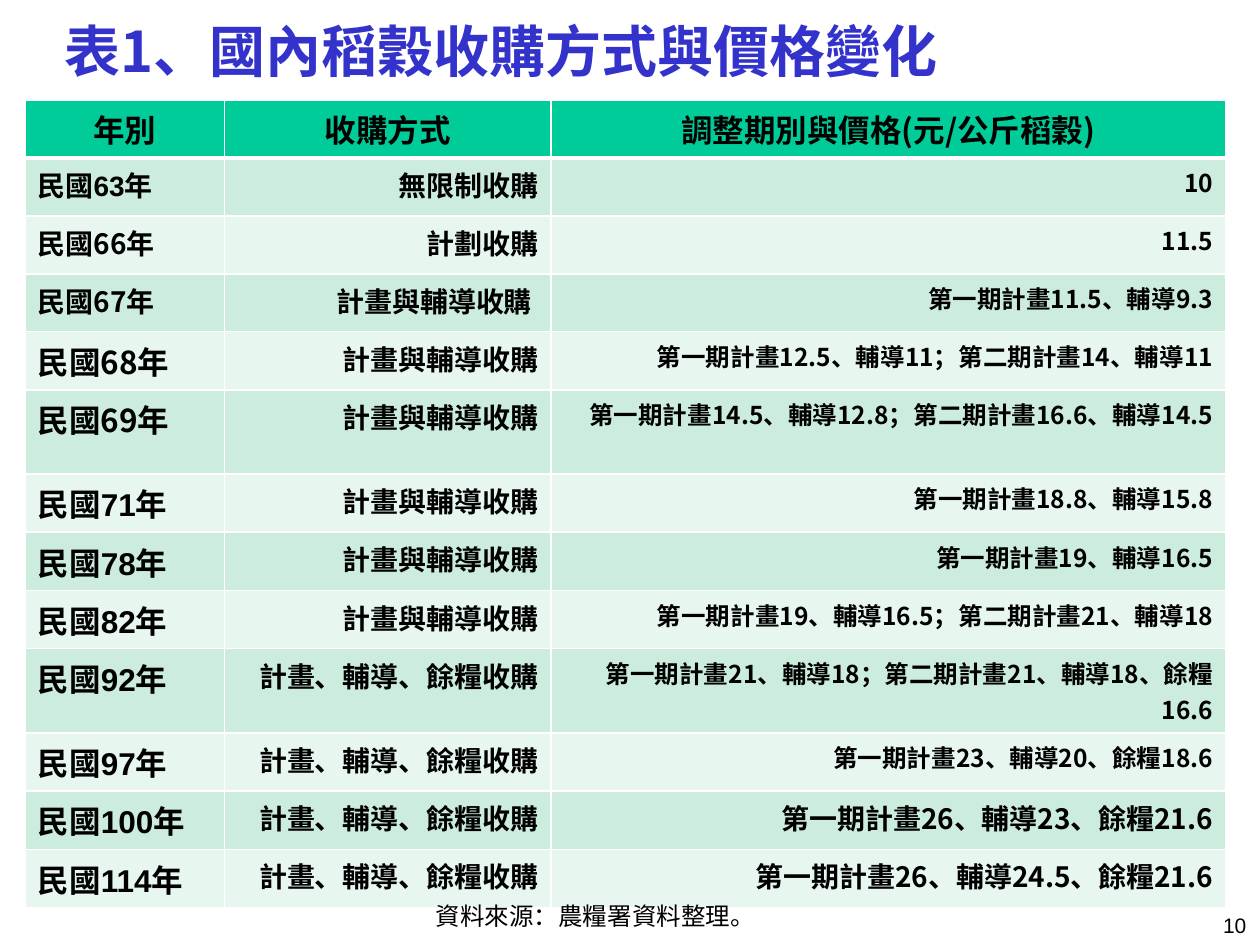
from pptx import Presentation
from pptx.dml.color import RGBColor as Rgb
from pptx.enum.text import MSO_ANCHOR as Anchor, PP_ALIGN as Align
from pptx.oxml.ns import qn
from pptx.util import Pt
from lxml.etree import SubElement as Sub

SANS, ARIAL, TIMES = "Noto Sans CJK SC", "Arial", "Times New Roman"
BLACK, WHITE, BLUE = "000000", "FFFFFF", "3333CC"
HEAD, BANDS = "00CC99", ("CCECDE", "E7F6EF")
LEFT, MID, RIGHT = Align.LEFT, Align.CENTER, Align.RIGHT


def tint(code):
    return Rgb.from_string(code)


class Page:
    def __init__(self, deck):
        self.slide = deck.slides.add_slide(deck.slide_layouts[5])

    def text(self, frame, runs, align, color=BLACK, bold=False):
        """Fill a frame with runs of (text, size, font)."""
        para = frame.paragraphs[0]
        para.alignment = align
        for words, size, face in runs:
            run = para.add_run()
            run.text = words
            font = run.font
            font.size, font.bold, font.name = Pt(size), bold, face
            font.color.rgb = tint(color)
            Sub(run._r.get_or_add_rPr(), qn("a:ea"), typeface=SANS)

    def title(self, box, runs):
        shape = self.slide.shapes.title
        shape.left, shape.top, shape.width, shape.height = map(Pt, box)
        frame = shape.text_frame
        frame.word_wrap = True
        frame.vertical_anchor = Anchor.MIDDLE
        self.text(frame, runs, MID, BLUE, True)

    def label(self, box, runs, align):
        frame = self.slide.shapes.add_textbox(*map(Pt, box)).text_frame
        frame.word_wrap = True
        self.text(frame, runs, align)

    def edges(self, cell, top, bottom):
        props = cell._tc.get_or_add_tcPr()
        for side, width in (("L", 1), ("R", 1), ("T", top), ("B", bottom)):
            line = Sub(props, qn("a:ln" + side), w=str(Pt(width)))
            fill = Sub(line, qn("a:solidFill"))
            Sub(fill, qn("a:srgbClr"), val=WHITE)

    def table(self, left, top, widths, height, rows):
        """Each row holds three (text, size, font) runs; the first is the header."""
        grid = self.slide.shapes.add_table(
            len(rows), len(widths), Pt(left), Pt(top),
            Pt(sum(widths)), Pt(height * len(rows))).table
        for col, width in zip(grid.columns, widths):
            col.width = Pt(width)
        for i, row in enumerate(rows):
            grid.rows[i].height = Pt(height)
            for j, run in enumerate(row):
                cell = grid.cell(i, j)
                self.edges(cell, 3 if i == 1 else 1, 3 if i == 0 else 1)
                cell.fill.solid()
                cell.fill.fore_color.rgb = tint(BANDS[(i - 1) % 2] if i else HEAD)
                align = (LEFT if j == 0 else RIGHT) if i else MID
                self.text(cell.text_frame, [run], align, bold=True)


PLAN, REST = "計畫與輔導收購", "計畫、輔導、餘糧收購"
# Year, year size, year font, method, price, price size
DATA = [
    ("63", 16, ARIAL, "無限制收購", "10", 14),
    ("66", 16, SANS, "計劃收購", "11.5", 14),
    ("67", 16, SANS, PLAN + " ", "第一期計畫11.5、輔導9.3", 14),
    ("68", 18, SANS, PLAN, "第一期計畫12.5、輔導11；第二期計畫14、輔導11", 14),
    ("69", 18, SANS, PLAN, "第一期計畫14.5、輔導12.8；第二期計畫16.6、輔導14.5", 14),
    ("71", 18, ARIAL, PLAN, "第一期計畫18.8、輔導15.8", 14),
    ("78", 18, ARIAL, PLAN, "第一期計畫19、輔導16.5", 14),
    ("82", 18, ARIAL, PLAN, "第一期計畫19、輔導16.5；第二期計畫21、輔導18", 14),
    ("92", 18, ARIAL, REST, "第一期計畫21、輔導18；第二期計畫21、輔導18、餘糧16.6", 14),
    ("97", 18, ARIAL, REST, "第一期計畫23、輔導20、餘糧18.6", 14),
    ("100", 18, ARIAL, REST, "第一期計畫26、輔導23、餘糧21.6", 16),
    ("114", 18, ARIAL, REST, "第一期計畫26、輔導24.5、餘糧21.6", 16),
]


def main():
    deck = Presentation()
    deck.slide_width, deck.slide_height = Pt(720), Pt(540)
    page = Page(deck)

    # Title
    page.title((14.4, 0, 544.3, 57),
               [("表1", 32, SANS), ("、國內稻穀收購方式與價格變化", 32, TIMES)])

    # Price table
    heads = ("年別", "收購方式", "調整期別與價格(元/公斤稻穀)")
    rows = [[(words, 18, SANS) for words in heads]]
    for year, size, face, method, price, small in DATA:
        rows.append([(f"民國{year}年", size, face),
                     (method, 16, SANS), (price, small, SANS)])
    page.table(14.4, 57, (114, 186.5, 385.5), 33.1, rows)

    # Source note and page number
    page.label((139, 511.2, 402.5, 36), [("資料來源：農糧署資料整理。", 14, SANS)], MID)
    page.label((569.5, 517.7, 149.8, 36), [("10", 12, ARIAL)], RIGHT)

    deck.save("out.pptx")


if __name__ == "__main__":
    main()
